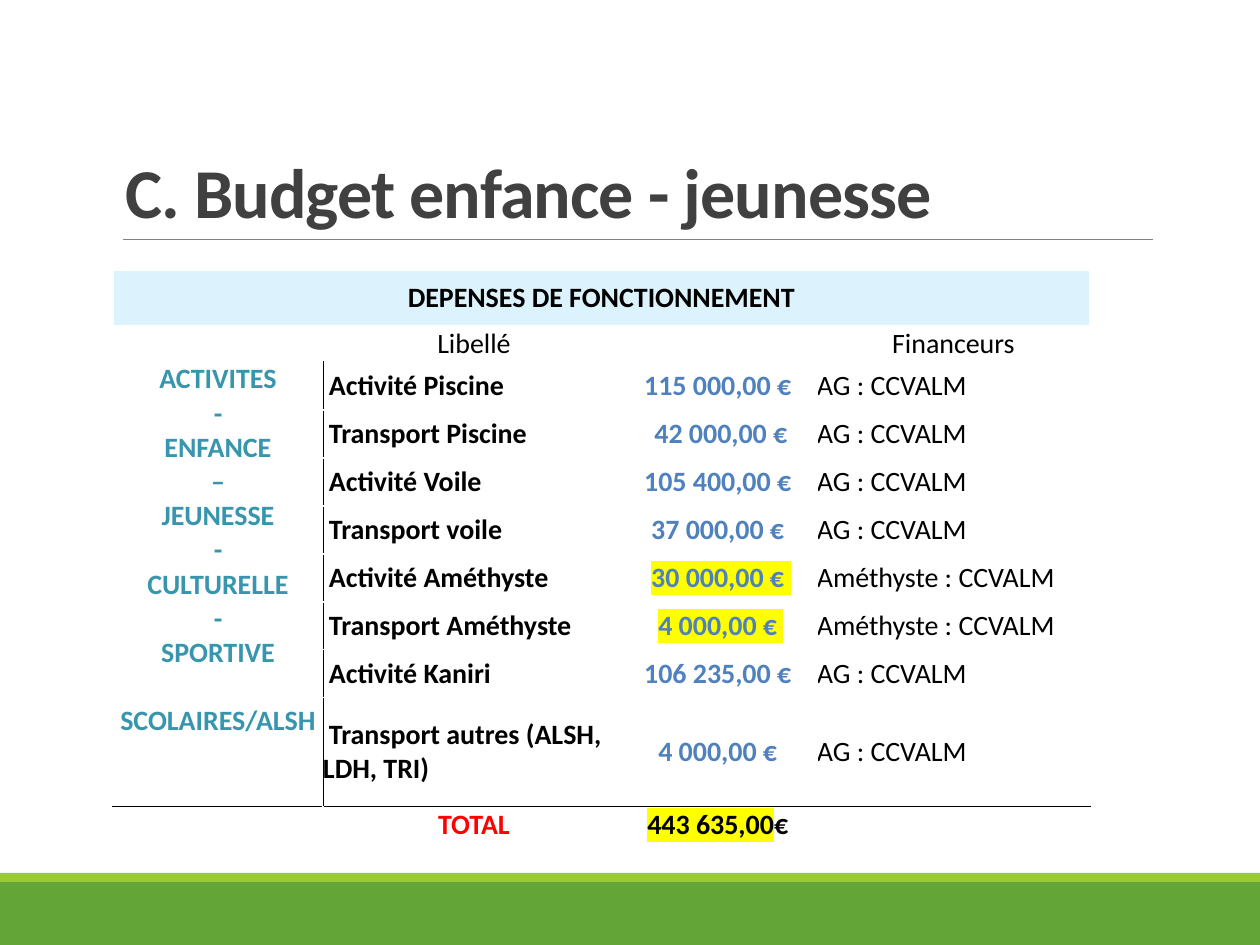
import pptx
import pptx.dml.color
import pptx.enum.shapes
import pptx.enum.text
import pptx.oxml.ns
import pptx.util
from lxml import etree

PX = 914400 // 126
FONT = "Calibri"
COLORS = {
    "green": "63A537",
    "lime": "99CB38",
    "rule": "808080",
    "title": "404040",
    "header": "DCF3FE",
    "black": "000000",
    "teal": "3795AD",
    "blue": "4F81BD",
    "red": "FF0000",
    "yellow": "FFFF00",
}
COLUMN_WIDTHS = [210, 302, 192, 273]
ROW_HEIGHTS = [56, 36] + [48] * 7 + [109, 36]
CATEGORIES = ["ACTIVITES", "-", "ENFANCE", "–", "JEUNESSE", "-",
              "CULTURELLE", "-", "SPORTIVE", "SCOLAIRES/ALSH"]
EXPENSES = [
    ("Activité Piscine", "115 000,00 € ", "AG : CCVALM", False),
    ("Transport Piscine", " 42 000,00 € ", "AG : CCVALM", False),
    ("Activité Voile", "105 400,00 € ", "AG : CCVALM", False),
    ("Transport voile", "37 000,00 € ", "AG : CCVALM", False),
    ("Activité Améthyste", "30 000,00 € ", "Améthyste : CCVALM", True),
    ("Transport Améthyste", "4 000,00 € ", "Améthyste : CCVALM", True),
    ("Activité Kaniri", "106 235,00 € ", "AG : CCVALM", False),
    ("Transport autres (ALSH, LDH, TRI)", "4 000,00 € ", "AG : CCVALM", False),
]


def px(length):
    return pptx.util.Emu(length * PX)


def rgb(name):
    return pptx.dml.color.RGBColor.from_string(COLORS[name])


def add_xml(parent, tag, **attributes):
    return etree.SubElement(parent, pptx.oxml.ns.qn(tag), **attributes)


def format_span(span, size, color, bold):
    span.font.size = pptx.util.Pt(size)
    span.font.bold = bold
    span.font.color.rgb = rgb(color)
    span.font.name = FONT


def highlight(span):
    mark = etree.Element(pptx.oxml.ns.qn("a:highlight"))
    add_xml(mark, "a:srgbClr", val=COLORS["yellow"])
    properties = span.font._element
    properties.find(pptx.oxml.ns.qn("a:solidFill")).addnext(mark)


def add_band(page, top, height, color):
    band = page.shapes.add_shape(pptx.enum.shapes.MSO_SHAPE.RECTANGLE,
                                 0, px(top), px(1260), px(height))
    band.shadow.inherit = False
    band.fill.solid()
    band.fill.fore_color.rgb = rgb(color)
    band.line.fill.background()


def add_rule(page, left, right, top):
    rule = page.shapes.add_connector(pptx.enum.shapes.MSO_CONNECTOR.STRAIGHT,
                                     px(left), px(top), px(right), px(top))
    rule.line.color.rgb = rgb("rule")
    rule.line.width = pptx.util.Pt(0.5)
    add_xml(rule._element.spPr, "a:effectLst")


def set_title(page, text):
    title = page.shapes.title
    title.left, title.top = px(113), px(39)
    title.width, title.height = px(1040), px(200)
    frame = title.text_frame
    frame.text = text
    frame.vertical_anchor = pptx.enum.text.MSO_ANCHOR.BOTTOM
    para = frame.paragraphs[0]
    para.alignment = pptx.enum.text.PP_ALIGN.LEFT
    para.line_spacing = 0.85
    para.space_after = pptx.util.Pt(6)
    span = para.runs[0]
    format_span(span, 40, "title", True)
    span.font._element.set("spc", "-50")


def set_cell(cell, text, color="black", bold=False, centered=True):
    cell.text_frame.text = text
    for para in cell.text_frame.paragraphs:
        if centered:
            para.alignment = pptx.enum.text.PP_ALIGN.CENTER
        for span in para.runs:
            format_span(span, 16, color, bold)


def set_border(cell, side, width):
    border = add_xml(cell._tc.get_or_add_tcPr(), "a:ln" + side,
                     w=str(pptx.util.Pt(width)))
    add_xml(add_xml(border, "a:solidFill"), "a:srgbClr", val=COLORS["black"])


def prepare_cell(cell, row, column):
    cell.margin_left = cell.margin_right = 0
    cell.margin_top = cell.margin_bottom = 0
    cell.vertical_anchor = pptx.enum.text.MSO_ANCHOR.MIDDLE
    total_row = len(ROW_HEIGHTS) - 1
    if 2 <= row < total_row and column == 1:
        set_border(cell, "L", 0.5)
    if 2 <= row < total_row and column == 0:
        set_border(cell, "R", 0.5)
    if row == total_row:
        set_border(cell, "T", 1)
    if row == total_row - 1 or (row == 2 and column == 0):
        set_border(cell, "B", 1)
    if row == 0:
        cell.fill.solid()
        cell.fill.fore_color.rgb = rgb("header")
    else:
        cell.fill.background()


def set_categories(cell):
    set_cell(cell, "\n".join(CATEGORIES), "teal", True)
    cell.text_frame.paragraphs[-1].space_before = pptx.util.Pt(19.5)
    cell.margin_bottom = px(68)


def set_expense(table, row, label, amount, funder, marked):
    set_cell(table.cell(row, 1), label, bold=True, centered=False)
    para = table.cell(row, 1).text_frame.paragraphs[0]
    para._p.get_or_add_pPr().set("indent", str(px(6)))
    set_cell(table.cell(row, 2), amount, "blue", True)
    if marked:
        highlight(table.cell(row, 2).text_frame.paragraphs[0].runs[0])
    set_cell(table.cell(row, 3), funder, centered=False)


def set_total(table, row):
    set_cell(table.cell(row, 1), "TOTAL", "red", True)
    amount = table.cell(row, 2)
    set_cell(amount, "443 635,00", bold=True)
    para = amount.text_frame.paragraphs[0]
    highlight(para.runs[0])
    currency = para.add_run()
    currency.text = "€ "
    format_span(currency, 16, "black", True)


def add_budget_table(page):
    frame = page.shapes.add_table(len(ROW_HEIGHTS), len(COLUMN_WIDTHS),
                                  px(113), px(270), px(sum(COLUMN_WIDTHS)),
                                  px(sum(ROW_HEIGHTS)))
    table = frame.table
    table.first_row = table.horz_banding = False
    for column, width in zip(table.columns, COLUMN_WIDTHS):
        column.width = px(width)
    for row, height in zip(table.rows, ROW_HEIGHTS):
        row.height = px(height)
    for row in range(len(ROW_HEIGHTS)):
        for column in range(len(COLUMN_WIDTHS)):
            prepare_cell(table.cell(row, column), row, column)
    table.cell(0, 0).merge(table.cell(0, 3))
    table.cell(2, 0).merge(table.cell(9, 0))
    set_cell(table.cell(0, 0), "DEPENSES DE FONCTIONNEMENT", bold=True)
    set_cell(table.cell(1, 1), "Libellé")
    set_cell(table.cell(1, 3), "Financeurs")
    set_categories(table.cell(2, 0))
    for row, expense in enumerate(EXPENSES, start=2):
        set_expense(table, row, *expense)
    set_total(table, len(ROW_HEIGHTS) - 1)
    for cell in table.iter_cells():
        if not cell.text_frame.text:
            add_xml(cell.text_frame.paragraphs[0]._p, "a:endParaRPr", sz="1600")


def main():
    deck = pptx.Presentation()
    deck.slide_width, deck.slide_height = px(1260), px(945)
    page = deck.slides.add_slide(deck.slide_layouts[5])
    add_band(page, 882, 63, "green")
    add_band(page, 873, 9, "lime")
    add_rule(page, 123, 1153, 239)
    set_title(page, "C. Budget enfance - jeunesse")
    add_budget_table(page)
    deck.save("out.pptx")


if __name__ == "__main__":
    main()
